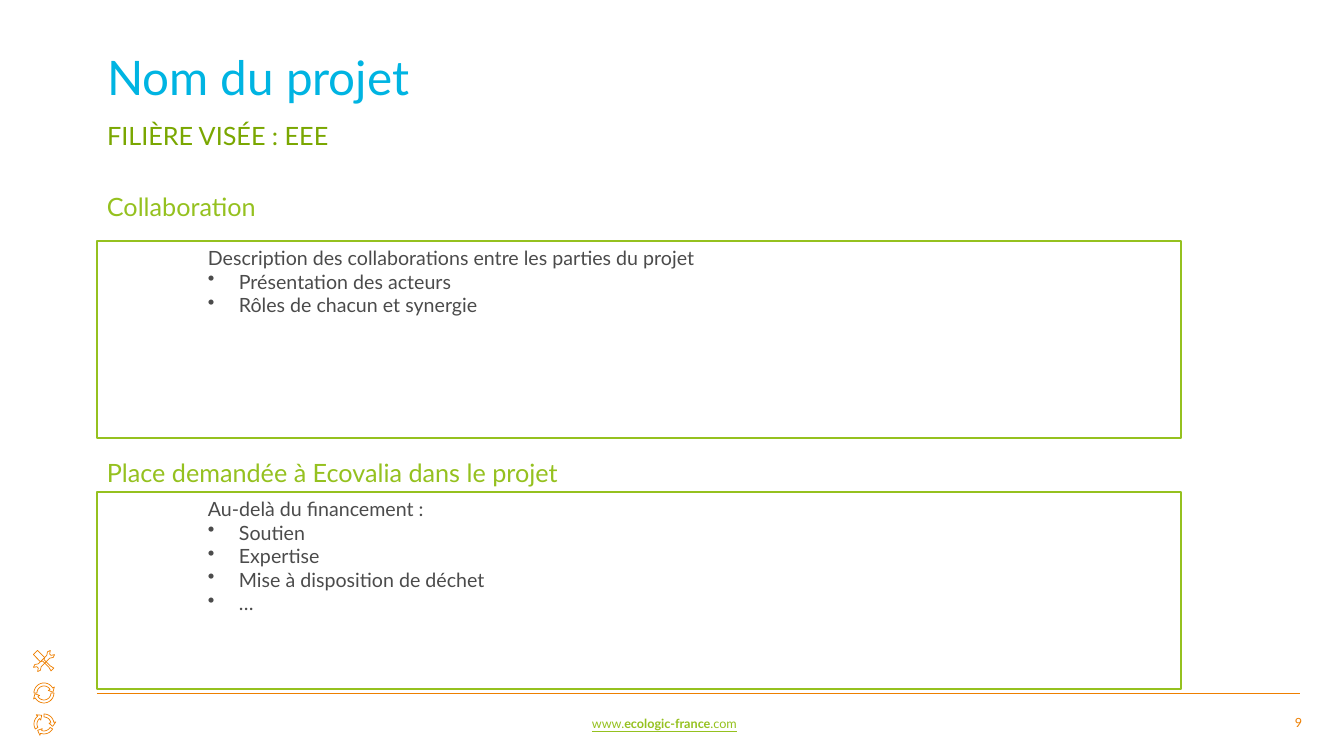
from math import cos, sin, radians
from lxml import etree
from pptx import Presentation
from pptx.dml.color import RGBColor
from pptx.enum.shapes import MSO_CONNECTOR, MSO_SHAPE
from pptx.enum.text import MSO_ANCHOR, PP_ALIGN
from pptx.oxml.ns import qn
from pptx.util import Pt

LEFT, RIGHT = PP_ALIGN.LEFT, PP_ALIGN.RIGHT
TOP, MIDDLE = MSO_ANCHOR.TOP, MSO_ANCHOR.MIDDLE
RECT, LINE = MSO_SHAPE.RECTANGLE, MSO_CONNECTOR.STRAIGHT
PX = 914400 / 100.8
BLUE, OLIVE, GREEN = "00B4E2", "7AA701", "95C11F"
ORANGE, GRAY, WHITE = "EE7F00", "4B4B4B", "FFFFFF"

TITLE = "Nom du projet"
FIELD = "FILIÈRE VISÉE : EEE"
PARTS = [
    ("Collaboration", 186, 241,
     "Description des collaborations entre les parties du projet",
     ["Présentation des acteurs", "Rôles de chacun et synergie"]),
    ("Place demandée à Ecovalia dans le projet", 452, 492,
     "Au-delà du financement :",
     ["Soutien", "Expertise", "Mise à disposition de déchet", "…"]),
]
SITE = [("www.", False), ("ecologic-france", True), (".com", False)]
PAGE = "9"
WRENCH = [(-12, -3), (-9, -4), (-6, -2), (6, -2), (9, -4), (12, -3),
          (9, -1), (9, 1), (12, 3), (9, 4), (6, 2), (-6, 2),
          (-9, 4), (-12, 3), (-9, 1), (-9, -1)]
DRIVER = [(-12, -3), (-2, -3), (-1, -1), (8, -1), (12, -2),
          (12, 2), (8, 1), (-1, 1), (-2, 3), (-12, 3)]
TOOLS = [(WRENCH, -45), (DRIVER, 45)]
RINGS = [(693, 2, 0, 150), (724, 3, 30, 80)]
MID = 44


def emu(n):
    return round(n * PX)


def place(x, y, w, h):
    return [emu(n) for n in (x, y, w, h)]


def color(code):
    return RGBColor.from_string(code)


def write(para, text, size, code, bold=False, under=False):
    run = para.add_run()
    run.text = text
    font = run.font
    font.name, font.size = "Lato", Pt(size)
    font.bold, font.underline = bold, under
    font.color.rgb = color(code)


def indent(para, left, hang, mark):
    props = para._p.get_or_add_pPr()
    props.set("marL", str(emu(left)))
    props.set("indent", str(emu(hang)))
    if mark:
        etree.SubElement(props, qn("a:buChar")).set("char", mark)
    else:
        etree.SubElement(props, qn("a:buNone"))
    para.alignment = LEFT


def label(x, y, w, h):
    frame = slide.shapes.add_textbox(*place(x, y, w, h)).text_frame
    frame.word_wrap = True
    return frame.paragraphs[0]


def holder(shape, box, text, size, code, anchor):
    shape.left, shape.top, shape.width, shape.height = place(*box)
    frame = shape.text_frame
    frame.vertical_anchor = anchor
    para = frame.paragraphs[0]
    indent(para, 0, 0, None)
    para.space_before = Pt(0)
    write(para, text, size, code)
    return para


def panel(y, lead, items):
    box = slide.shapes.add_shape(RECT, *place(97, y, 1084, 197))
    box.shadow.inherit = False
    box.fill.solid()
    box.fill.fore_color.rgb = color(WHITE)
    box.line.color.rgb = color(GREEN)
    box.line.width = Pt(1)
    frame = box.text_frame
    frame.word_wrap = True
    frame.vertical_anchor = TOP
    para = frame.paragraphs[0]
    indent(para, 101, 0, None)
    write(para, lead, 14, GRAY)
    for item in items:
        para = frame.add_paragraph()
        indent(para, 132, -31, "•")
        write(para, item, 14, GRAY)


def outline(points, y):
    spots = [(emu(MID + a), emu(y + b)) for a, b in points]
    path = slide.shapes.build_freeform(*spots[0], scale=1.0)
    path.add_line_segments(spots[1:], close=True)
    shape = path.convert_to_shape()
    shape.shadow.inherit = False
    shape.fill.background()
    shape.line.color.rgb = color(ORANGE)
    shape.line.width = Pt(0.5)


def polar(size, turn):
    return size * cos(radians(turn)), size * sin(radians(turn))


def rotate(points, turn):
    c, s = polar(1, turn)
    return [(x * c - y * s, x * s + y * c) for x, y in points]


def arrow(start, span):
    turns = range(start, start + span + 1, 10)
    end = start + span
    outer = [polar(10, t) for t in turns]
    inner = [polar(7, t) for t in reversed(turns)]
    head = [polar(12, end), polar(9, end + 25), polar(5, end)]
    return outer + head + inner


deck = Presentation()
deck.slide_width, deck.slide_height = emu(1344), emu(756)
slide = deck.slides.add_slide(deck.slide_layouts[1])
title, body = slide.placeholders
para = holder(title, (97, 49, 1151, 63), TITLE, 34, BLUE, MIDDLE)
para.line_spacing = 0.9
holder(body, (97, 115, 1151, 40), FIELD, 18, OLIVE, TOP)

for name, top, edge, lead, items in PARTS:
    write(label(97, top, 1151, 40), name, 18, GREEN)
    panel(edge, lead, items)

rule = slide.shapes.add_connector(
    LINE, emu(97), emu(694), emu(1300), emu(694))
rule.line.color.rgb = color(ORANGE)
rule.line.width = Pt(0.75)
etree.SubElement(rule._element.spPr, qn("a:effectLst"))

para = label(582, 711, 528, 25)
for text, bold in SITE:
    write(para, text, 9, GREEN, bold, True)
para = label(1248, 710, 64, 26)
para.alignment = RIGHT
write(para, PAGE, 9, ORANGE)

for points, turn in TOOLS:
    outline(rotate(points, turn), 661)
for y, count, start, span in RINGS:
    for i in range(count):
        outline(arrow(start + i * 360 // count, span), y)

deck.save("out.pptx")
